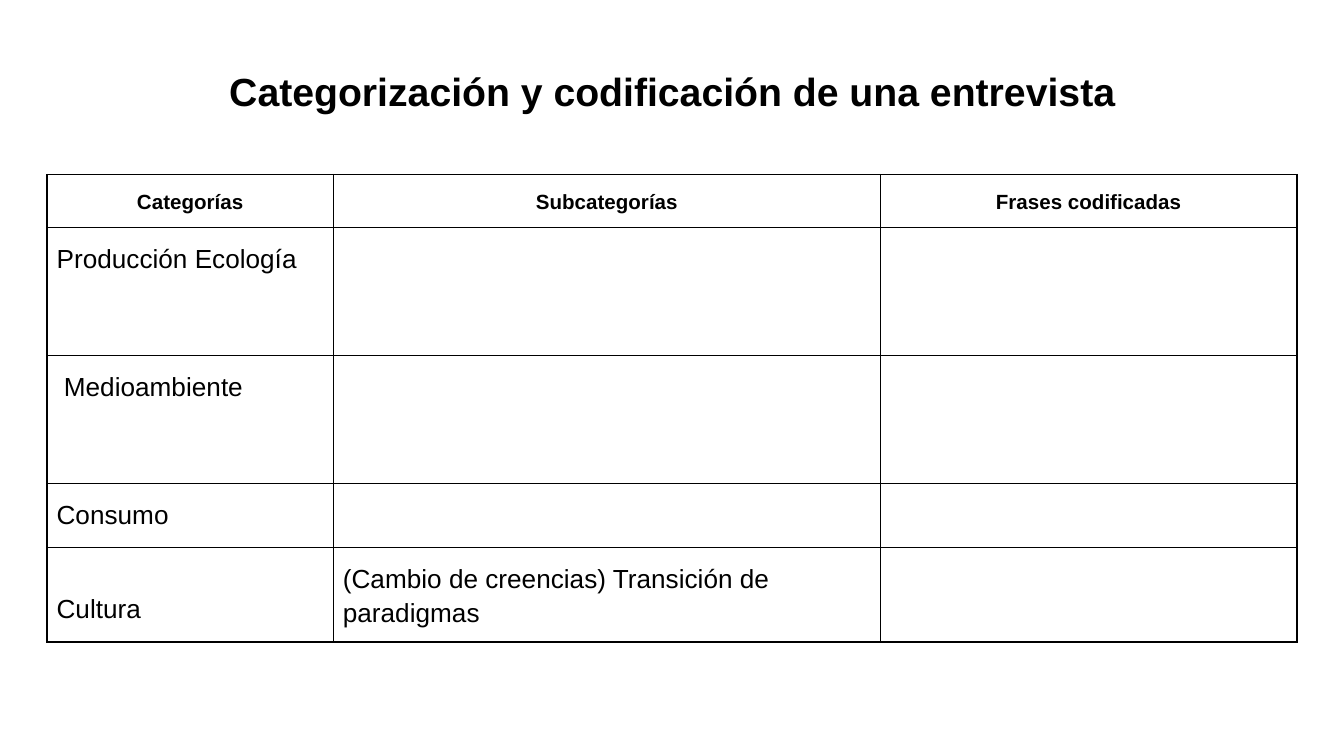
from lxml import etree
from pptx import Presentation
from pptx.dml.color import RGBColor
from pptx.enum.text import MSO_ANCHOR, PP_ALIGN
from pptx.oxml.ns import qn
from pptx.util import Cm, Pt

LEFT, CENTER = PP_ALIGN.LEFT, PP_ALIGN.CENTER
TOP, MIDDLE, BOTTOM = MSO_ANCHOR.TOP, MSO_ANCHOR.MIDDLE, MSO_ANCHOR.BOTTOM
BLACK = RGBColor(0, 0, 0)

TITLE = "Categorización y codificación de una entrevista"
TITLE_BOX = (3.86, 0.58, 17.7, 2.72)
TABLE_BOX = (0.89, 3.3, 23.62, 8.83)
COLUMN_WIDTHS = (5.41, 10.34, 7.87)
ROW_HEIGHTS = (1.0, 2.42, 2.42, 1.21, 1.78)
ROWS = (
    ("Categorías", "Subcategorías", "Frases codificadas"),
    ("Producción Ecología", "", ""),
    (" Medioambiente", "", ""),
    ("Consumo", "", ""),
    ("Cultura", "(Cambio de creencias) Transición de paradigmas", ""),
)
TITLE_FONT = {"name": "Arial", "size": Pt(21), "bold": True}
HEADER_FONT = {"name": "Arial", "size": Pt(11), "bold": True}
BODY_FONT = {"name": "Arial", "size": Pt(14), "bold": False}
TITLE_FRAME = {"word_wrap": True, "vertical_anchor": MIDDLE,
               "margin_left": Cm(0.25), "margin_right": Cm(0.25),
               "margin_top": Cm(0.25), "margin_bottom": Cm(0.83)}
CELL_FORMAT = {"vertical_anchor": TOP,
               "margin_left": Cm(0.18), "margin_right": Cm(0.18),
               "margin_top": Cm(0.25), "margin_bottom": Cm(0.25)}
LAST_CATEGORY_FORMAT = {"vertical_anchor": BOTTOM, "margin_bottom": Cm(0.33)}


def apply_format(target, values):
    for name, value in values.items():
        setattr(target, name, value)


def write_paragraph(paragraph, text, font, alignment):
    apply_format(paragraph, {"alignment": alignment, "line_spacing": 1.15})
    run = paragraph.add_run()
    run.text = text
    apply_format(run.font, font)
    run.font.color.rgb = BLACK


def add_borders(cell):
    properties = cell._tc.get_or_add_tcPr()
    for side in ("a:lnL", "a:lnR", "a:lnT", "a:lnB"):
        line = etree.SubElement(properties, qn(side), w=str(Pt(1)))
        fill = etree.SubElement(line, qn("a:solidFill"))
        etree.SubElement(fill, qn("a:srgbClr"), val=str(BLACK))


def place_title(slide, box):
    title = slide.shapes.title
    apply_format(title, dict(zip(("left", "top", "width", "height"), map(Cm, box))))
    apply_format(title.text_frame, TITLE_FRAME)
    write_paragraph(title.text_frame.paragraphs[0], TITLE, TITLE_FONT, CENTER)


def place_table(slide, box):
    frame = slide.shapes.add_table(len(ROWS), len(COLUMN_WIDTHS), *map(Cm, box))
    table = frame.table
    apply_format(table, {"first_row": False, "horz_banding": False})
    for column, width in zip(table.columns, COLUMN_WIDTHS):
        column.width = Cm(width)
    for row, height in zip(table.rows, ROW_HEIGHTS):
        row.height = Cm(height)
    for row_index, texts in enumerate(ROWS):
        font, alignment = (BODY_FONT, LEFT) if row_index else (HEADER_FONT, CENTER)
        for column_index, text in enumerate(texts):
            cell = table.cell(row_index, column_index)
            add_borders(cell)
            cell.fill.background()
            if text:
                apply_format(cell, CELL_FORMAT)
                write_paragraph(cell.text_frame.paragraphs[0], text, font, alignment)
    apply_format(table.cell(len(ROWS) - 1, 0), LAST_CATEGORY_FORMAT)


def main():
    presentation = Presentation()
    presentation.slide_width = Cm(25.4)
    presentation.slide_height = Cm(14.29)
    slide = presentation.slides.add_slide(presentation.slide_layouts[5])
    place_table(slide, TABLE_BOX)
    place_title(slide, TITLE_BOX)
    presentation.save("out.pptx")


if __name__ == "__main__":
    main()
